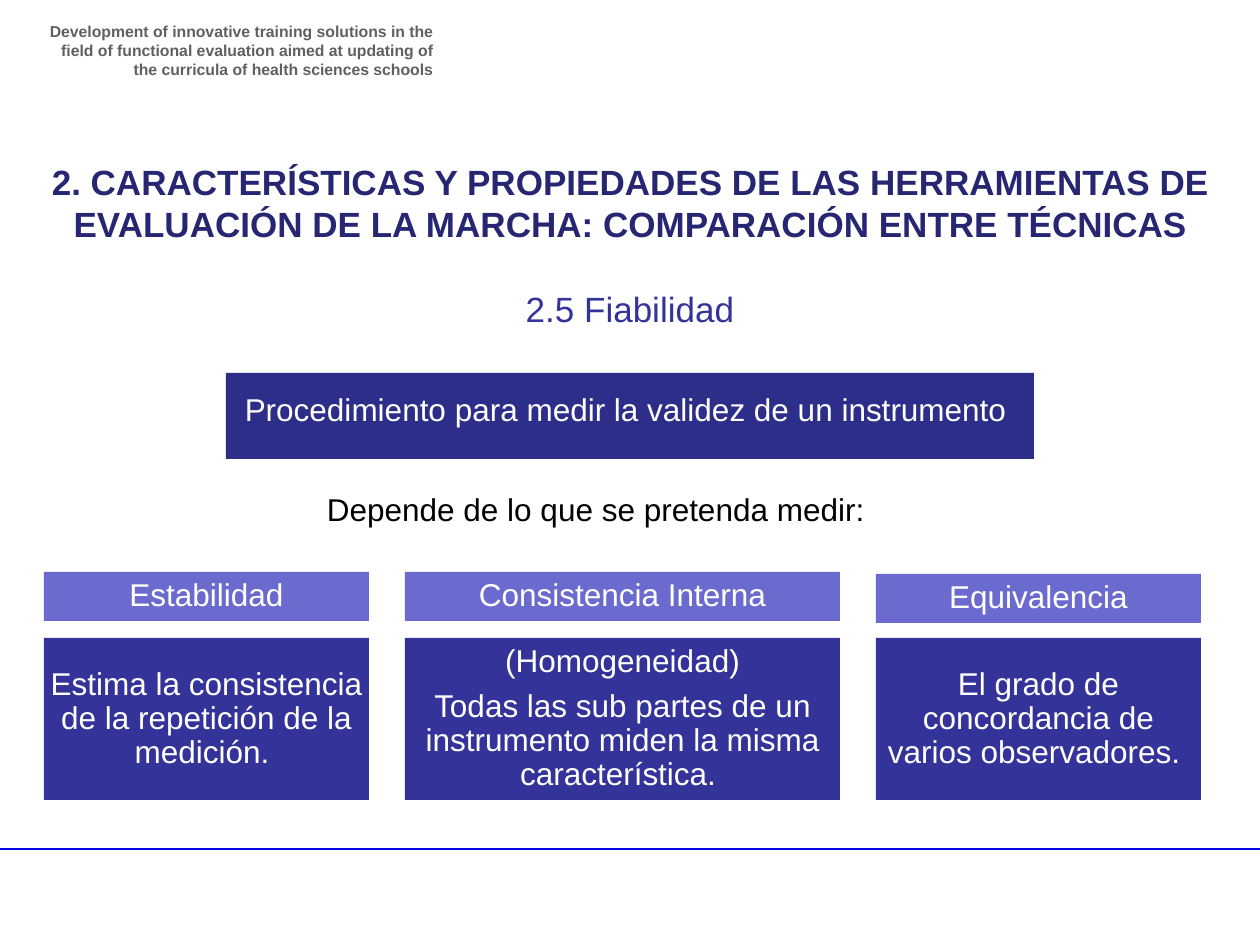
import lxml.etree
import pptx
import pptx.dml.color
import pptx.enum.shapes
import pptx.enum.text
import pptx.oxml.ns
import pptx.util

RGB = pptx.dml.color.RGBColor
ALIGN = pptx.enum.text.PP_ALIGN
ANCHOR = pptx.enum.text.MSO_ANCHOR

WHITE = RGB(0xFF, 0xFF, 0xFF)
BLACK = RGB(0, 0, 0)
GREY = RGB(0x60, 0x60, 0x60)
RULE = RGB(0x04, 0x04, 0xE6)
NAVY = RGB(0x26, 0x26, 0x73)
DEEP = RGB(0x2D, 0x2D, 0x8A)
INDIGO = RGB(0x33, 0x33, 0x99)
LILAC = RGB(0x6B, 0x6B, 0xCF)


def px(n):
    """Turn pixels into EMU."""
    return pptx.util.Emu(round(n * 914400 / 126))


class Page:
    """Holds the style and the current slide."""

    font = "Arial"

    def __init__(self, deck):
        self.slide = deck.slides.add_slide(deck.slide_layouts[5])
        self.shapes = self.slide.shapes

    def style(self, shape, texts, size, color, align=ALIGN.CENTER, bold=False,
              space=None, after=0, inset=(13, 6), anchor=ANCHOR.TOP):
        """Fill a shape with styled paragraphs."""
        frame = shape.text_frame
        frame.word_wrap = True
        frame.auto_size = pptx.enum.text.MSO_AUTO_SIZE.NONE
        frame.vertical_anchor = anchor
        frame.margin_left = frame.margin_right = px(inset[0])
        frame.margin_top = frame.margin_bottom = px(inset[1])
        frame.text = "\n".join(texts)
        for par in frame.paragraphs:
            par.alignment = align
            par.line_spacing = space
            par.space_after = pptx.util.Pt(after)
            par.font.name = self.font
            par.font.size = pptx.util.Pt(size)
            par.font.bold = bold
            par.font.color.rgb = color

    def title(self, box, text, size, color):
        """Place the title."""
        shape = self.shapes.title
        shape.left, shape.top, shape.width, shape.height = map(px, box)
        self.style(shape, [text], size, color, bold=True)

    def label(self, box, text, size, color, **looks):
        """Add a text box."""
        shape = self.shapes.add_textbox(*map(px, box))
        self.style(shape, [text], size, color, **looks)

    def panel(self, box, fill, *texts, space=0.9):
        """Add a filled rectangle with white text."""
        kind = pptx.enum.shapes.MSO_SHAPE.RECTANGLE
        shape = self.shapes.add_shape(kind, *map(px, box))
        shape.shadow.inherit = False
        shape.fill.solid()
        shape.fill.fore_color.rgb = fill
        shape.line.fill.background()
        self.style(shape, texts, 18, WHITE, space=space, after=6.3,
                   inset=(1, 1), anchor=ANCHOR.MIDDLE)

    def rule(self, left, right, top):
        """Add a level line."""
        kind = pptx.enum.shapes.MSO_CONNECTOR.STRAIGHT
        line = self.shapes.add_connector(kind, *map(px, (left, top, right, top)))
        line.line.color.rgb = RULE
        line.line.width = pptx.util.Pt(1)
        props = line._element.spPr
        lxml.etree.SubElement(props, pptx.oxml.ns.qn("a:effectLst"))


def main():
    """Build the slide."""
    deck = pptx.Presentation()
    deck.slide_width, deck.slide_height = px(1260), px(945)
    page = Page(deck)

    page.rule(-6, 1260, 849)
    page.label((35, 16, 411, 59),
               "Development of innovative training solutions in the ﬁeld of "
               "functional evaluation aimed at updating of the curricula of "
               "health sciences schools",
               9, GREY, align=ALIGN.RIGHT, bold=True)
    page.title((35, 154, 1191, 97),
               "2. CARACTERÍSTICAS Y PROPIEDADES DE LAS HERRAMIENTAS DE "
               "EVALUACIÓN DE LA MARCHA: COMPARACIÓN ENTRE TÉCNICAS",
               20, NAVY)
    page.label((174, 281, 912, 55), "2.5 Fiabilidad", 20, INDIGO)
    page.panel((226, 373, 808, 86), DEEP,
               "Procedimiento para medir la validez de un instrumento ",
               space=pptx.util.Pt(14))
    page.label((314, 484, 632, 50), "Depende de lo que se pretenda medir:",
               18, BLACK, align=ALIGN.LEFT)

    cols = [
        (325, 572, "Estabilidad",
         ["Estima la consistencia de la repetición de la medición. "]),
        (435, 572, "Consistencia Interna",
         ["(Homogeneidad)",
          "Todas las sub partes de un instrumento miden la misma "
          "característica. "]),
        (325, 574, "Equivalencia",
         ["El grado de concordancia de varios observadores. "]),
    ]
    left, gap = 44, 36
    for width, top, head, body in cols:
        page.panel((left, top, width, 49), LILAC, head)
        page.panel((left, 638, width, 162), INDIGO, *body)
        left += width + gap

    deck.save("out.pptx")


if __name__ == "__main__":
    main()
